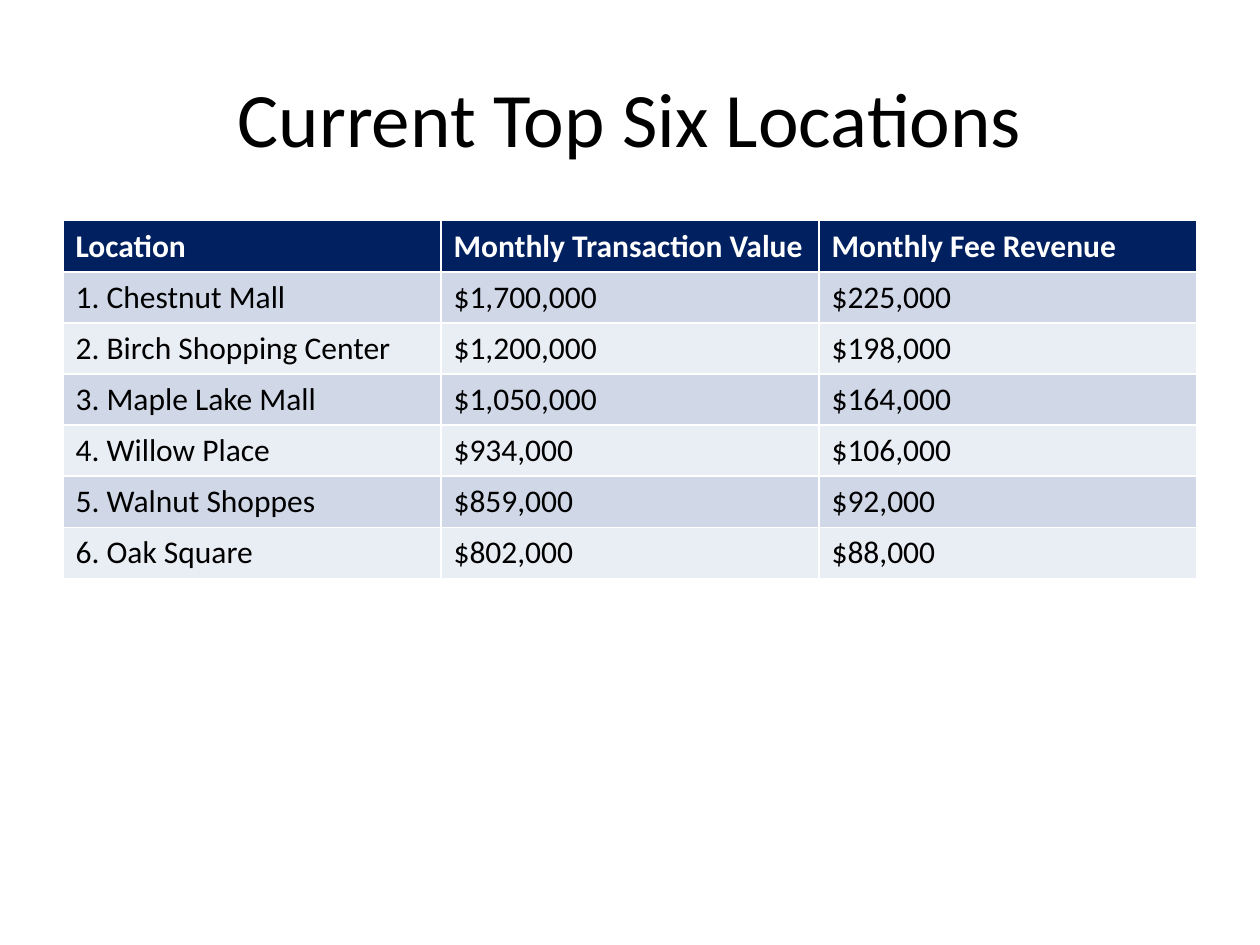
"""Build a slide with a table of the current top six locations."""
from pptx import Presentation
from pptx import util as u
from pptx.dml.color import RGBColor
from pptx.enum import text

TITLE = "Current Top Six Locations"
HEADERS = ("Location", "Monthly Transaction Value", "Monthly Fee Revenue")
LOCATIONS = [
    ("Chestnut Mall", 1700000, 225000),
    ("Birch Shopping Center", 1200000, 198000),
    ("Maple Lake Mall", 1050000, 164000),
    ("Willow Place", 934000, 106000),
    ("Walnut Shoppes", 859000, 92000),
    ("Oak Square", 802000, 88000),
]
HEADER_FILL = "002060"
BAND_FILLS = ("D0D8E8", "E9EDF4")
LEFT, WIDTH = u.Cm(1.27), u.Cm(22.86)
TITLE_TOP, TITLE_HEIGHT = u.Cm(0.76), u.Cm(3.18)
TABLE_TOP, ROW_HEIGHT = u.Cm(4.45), u.Cm(1.03)


def color(value):
    return RGBColor.from_string(value)


def write(frame, content, size=18, fill="000000", bold=False, align=text.PP_ALIGN.LEFT):
    paragraph = frame.paragraphs[0]
    paragraph.alignment = align
    run = paragraph.add_run()
    run.text = content
    run.font.name = "Calibri"
    run.font.size = u.Pt(size)
    run.font.bold = bold
    run.font.color.rgb = color(fill)


def add_title(slide):
    title = slide.shapes.title
    title.left, title.top, title.width, title.height = LEFT, TITLE_TOP, WIDTH, TITLE_HEIGHT
    title.text_frame.vertical_anchor = text.MSO_ANCHOR.MIDDLE
    write(title.text_frame, TITLE, size=44, align=text.PP_ALIGN.CENTER)


def add_locations(slide):
    rows = [HEADERS]
    for rank, (name, value, revenue) in enumerate(LOCATIONS, 1):
        rows.append((f"{rank}. {name}", f"${value:,}", f"${revenue:,}"))
    table = slide.shapes.add_table(
        len(rows), len(HEADERS), LEFT, TABLE_TOP, WIDTH, ROW_HEIGHT * len(rows)
    ).table
    for index, row in enumerate(rows):
        is_header = index == 0
        background = HEADER_FILL if is_header else BAND_FILLS[(index - 1) % 2]
        for cell, content in zip(table.rows[index].cells, row):
            cell.fill.solid()
            cell.fill.fore_color.rgb = color(background)
            write(cell.text_frame, content, bold=is_header,
                  fill="FFFFFF" if is_header else "000000")


def main():
    presentation = Presentation()
    presentation.slide_width, presentation.slide_height = u.Cm(25.4), u.Cm(19.05)
    slide = presentation.slides.add_slide(presentation.slide_layouts[5])
    add_title(slide)
    add_locations(slide)
    presentation.save("out.pptx")


if __name__ == "__main__":
    main()
